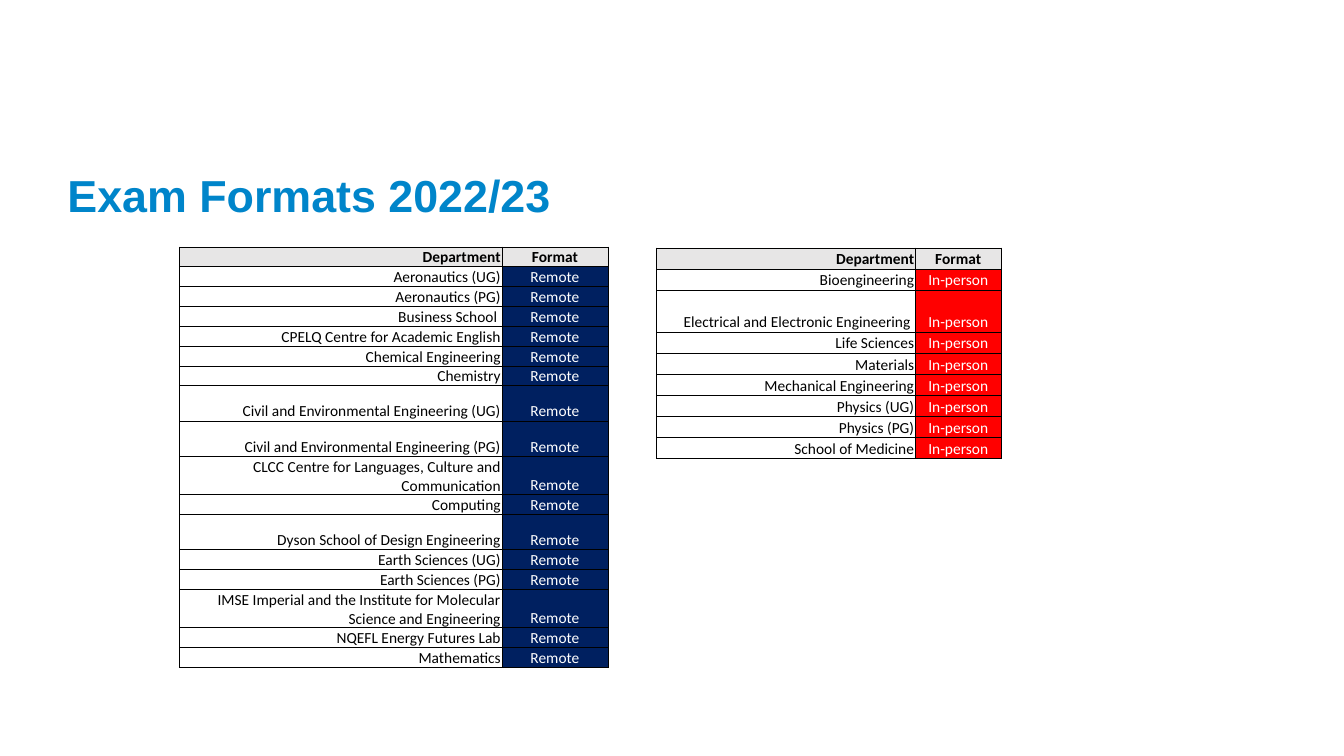
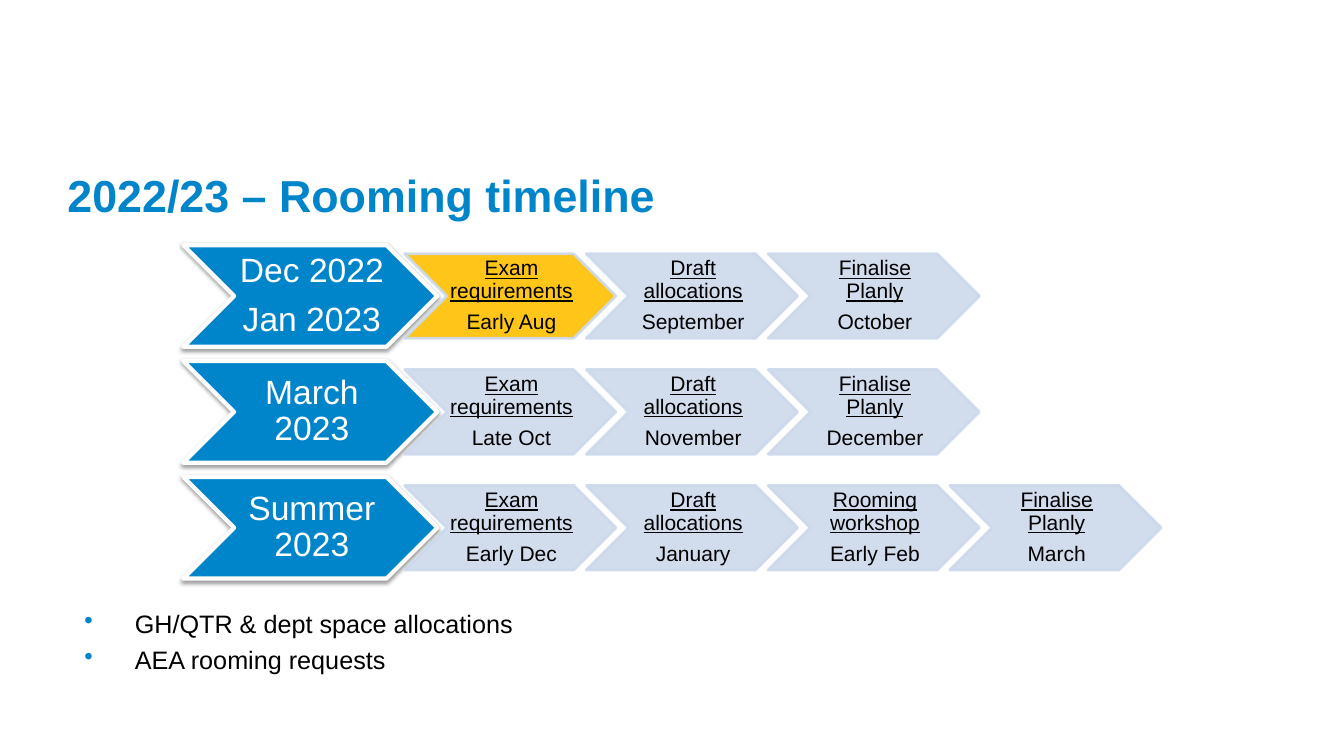
import dataclasses

import lxml.etree
import pptx
import pptx.dml.color
import pptx.enum.shapes
import pptx.enum.text
import pptx.oxml.ns
import pptx.util

Cm = pptx.util.Cm
Pt = pptx.util.Pt
ALIGN = pptx.enum.text.PP_ALIGN
ANCHOR = pptx.enum.text.MSO_ANCHOR


@dataclasses.dataclass(frozen=True)
class Theme:
    blue: str = "0085CA"
    pale: str = "CCD9EC"
    gold: str = "FFC000"
    navy: str = "002060"
    red: str = "FF0000"
    grey: str = "E7E6E6"
    black: str = "000000"
    white: str = "FFFFFF"
    font: str = "Arial"
    table_font: str = "Calibri"
    title_size: float = 32
    period_size: float = 24
    bullet_size: float = 18
    step_size: float = 15
    table_size: float = 11


T = Theme()

REMOTE = [
    "Aeronautics (UG)", "Aeronautics (PG)", "Business School ",
    "CPELQ Centre for Academic English", "Chemical Engineering", "Chemistry",
    "Civil and Environmental Engineering (UG)",
    "Civil and Environmental Engineering (PG)",
    "CLCC Centre for Languages, Culture and Communication", "Computing",
    "Dyson School of Design Engineering", "Earth Sciences (UG)",
    "Earth Sciences (PG)",
    "IMSE Imperial and the Institute for Molecular Science and Engineering",
    "NQEFL Energy Futures Lab", "Mathematics",
]
IN_PERSON = [
    "Bioengineering", "Electrical and Electronic Engineering ",
    "Life Sciences", "Materials", "Mechanical Engineering", "Physics (UG)",
    "Physics (PG)", "School of Medicine",
]
TALL = {REMOTE[6], REMOTE[7], REMOTE[8], REMOTE[10], REMOTE[13], IN_PERSON[1]}

EXAM, DRAFT, WORKSHOP, FINAL = (
    "Exam requirements", "Draft allocations", "Rooming workshop", "Finalise Planly")
TIMELINE = [
    (["Dec 2022", "Jan 2023"],
     [(EXAM, "Early Aug"), (DRAFT, "September"), (FINAL, "October")]),
    (["March 2023"],
     [(EXAM, "Late Oct"), (DRAFT, "November"), (FINAL, "December")]),
    (["Summer 2023"],
     [(EXAM, "Early Dec"), (DRAFT, "January"), (WORKSHOP, "Early Feb"),
      (FINAL, "March")]),
]


def rgb(value):
    return pptx.dml.color.RGBColor.from_string(value)


def sub(parent, tag, **attrs):
    return lxml.etree.SubElement(parent, pptx.oxml.ns.qn(tag), attrs)


def write(tf, text, size, color=T.black, font=T.font, bold=False,
          underline=False, align=ALIGN.LEFT, spacing=None, before=0, after=0,
          bullet=None):
    p = tf.paragraphs[0]
    if p.runs:
        p = tf.add_paragraph()
        p.space_before = Pt(before)
    p.alignment = align
    p.space_after = Pt(after)
    if spacing:
        p.line_spacing = spacing
    if bullet:
        ppr = p._p.get_or_add_pPr()
        ppr.set("marL", str(Cm(1.27)))
        ppr.set("indent", str(-Cm(1.27)))
        sub(sub(ppr, "a:buClr"), "a:srgbClr", val=bullet)
        sub(ppr, "a:buChar", char="•")
    r = p.add_run()
    r.text = text
    r.font.name = font
    r.font.size = Pt(size)
    r.font.bold = bold
    r.font.underline = underline
    r.font.color.rgb = rgb(color)


def set_margins(box, left=0, top=0, right=0, bottom=0):
    box.margin_left, box.margin_top = Cm(left), Cm(top)
    box.margin_right, box.margin_bottom = Cm(right), Cm(bottom)


def add_text_box(s, x, y, w, h, top=0, anchor=ANCHOR.TOP):
    tf = s.shapes.add_textbox(Cm(x), Cm(y), Cm(w), Cm(h)).text_frame
    tf.word_wrap = True
    tf.vertical_anchor = anchor
    set_margins(tf, top=top)
    return tf


def add_titled_slide(prs, title):
    s = prs.slides.add_slide(prs.slide_layouts[6])
    tf = add_text_box(s, 1.7, 4.14, 30.48, 1.42, top=0.13, anchor=ANCHOR.MIDDLE)
    write(tf, title, T.title_size, T.blue, bold=True)
    return s


def fill_cell(cell, text, color, fill, align, bold):
    cell.vertical_anchor = ANCHOR.BOTTOM
    set_margins(cell, 0.03, 0.03, 0.03)
    write(cell.text_frame, text, T.table_size, color, T.table_font, bold,
          align=align)
    tcpr = cell._tc.get_or_add_tcPr()
    for side in ("a:lnL", "a:lnR", "a:lnT", "a:lnB"):
        ln = sub(tcpr, side, w=str(Pt(0.5)))
        sub(sub(ln, "a:solidFill"), "a:srgbClr", val=T.black)
    if fill:
        cell.fill.solid()
        cell.fill.fore_color.rgb = rgb(fill)
    else:
        cell.fill.background()


def add_format_table(s, x, y, widths, row_h, tall_h, names, label, fill):
    heights = [tall_h if name in TALL else row_h for name in ["", *names]]
    table = s.shapes.add_table(
        len(heights), 2, Cm(x), Cm(y), Cm(sum(widths)), Cm(sum(heights))).table
    table.horz_banding = False
    for column, width in zip(table.columns, widths):
        column.width = Cm(width)
    for row, height in zip(table.rows, heights):
        row.height = Cm(height)
    rows = [("Department", "Format")] + [(name, label) for name in names]
    for i, (name, kind) in enumerate(rows):
        head = i == 0
        fill_cell(table.cell(i, 0), name, T.black, T.grey if head else None,
                  ALIGN.RIGHT, head)
        fill_cell(table.cell(i, 1), kind, T.black if head else T.white,
                  T.grey if head else fill, ALIGN.CENTER, head)


def add_chevron(s, x, y, w, h, fill, line, line_w, margin):
    sp = s.shapes.add_shape(pptx.enum.shapes.MSO_SHAPE.CHEVRON,
                            Cm(x), Cm(y), Cm(w), Cm(h))
    sp.shadow.inherit = False
    sp.fill.solid()
    sp.fill.fore_color.rgb = rgb(fill)
    sp.line.color.rgb = rgb(line)
    sp.line.width = Pt(line_w)
    tf = sp.text_frame
    tf.word_wrap = True
    tf.vertical_anchor = ANCHOR.MIDDLE
    set_margins(tf, margin * 2, margin, 0, margin)
    return sp


def add_period(s, x, y, w, h, lines):
    sp = add_chevron(s, x, y, w, h, T.blue, T.white, 3, 0.04)
    effects = sp._element.spPr.find(pptx.oxml.ns.qn("a:effectLst"))
    shadow = sub(effects, "a:outerShdw", blurRad=str(Pt(3.1)),
                 dist=str(Pt(1.6)), dir="5400000", rotWithShape="0")
    sub(sub(shadow, "a:srgbClr", val=T.black), "a:alpha", val="38000")
    for line in lines:
        write(sp.text_frame, line, T.period_size, T.white, align=ALIGN.CENTER,
              spacing=0.9, after=9.6)


def add_step(s, x, y, w, h, task, date, fill):
    sp = add_chevron(s, x, y, w, h, fill, T.pale, 2, 0.03)
    for color in sp._element.spPr.iter(pptx.oxml.ns.qn("a:srgbClr")):
        sub(color, "a:alpha", val="90000")
    for text, underline in ((task, True), (date, False)):
        write(sp.text_frame, text, T.step_size, underline=underline,
              align=ALIGN.CENTER, spacing=0.9, after=6)


def add_timeline(s):
    period_w, period_h, step_w, step_h = 6.4, 2.56, 5.32, 2.13
    for i, (lines, steps) in enumerate(TIMELINE):
        y = 6.18 + i * 2.92
        add_period(s, 4.62, y, period_w, period_h, lines)
        for j, (task, date) in enumerate(steps):
            fill = T.gold if i == j == 0 else T.pale
            add_step(s, 10.2 + j * 4.58, y + (period_h - step_h) / 2,
                     step_w, step_h, task, date, fill)


def main():
    prs = pptx.Presentation()
    prs.slide_width, prs.slide_height = Cm(33.87), Cm(19.05)

    s = add_titled_slide(prs, "Exam Formats 2022/23")
    add_format_table(s, 16.54, 6.25, (6.53, 2.16), 0.53, 1.06,
                     IN_PERSON, "In-person", T.red)
    add_format_table(s, 4.52, 6.22, (8.13, 2.67), 0.5, 0.89,
                     REMOTE, "Remote", T.navy)

    s = add_titled_slide(prs, "2022/23 – Rooming timeline")
    tf = add_text_box(s, 2.13, 15.34, 30.48, 3)
    for text in ("GH/QTR & dept space allocations", "AEA rooming requests"):
        write(tf, text, T.bullet_size, before=4.1, bullet=T.blue)
    add_timeline(s)

    prs.save("out.pptx")


if __name__ == "__main__":
    main()
